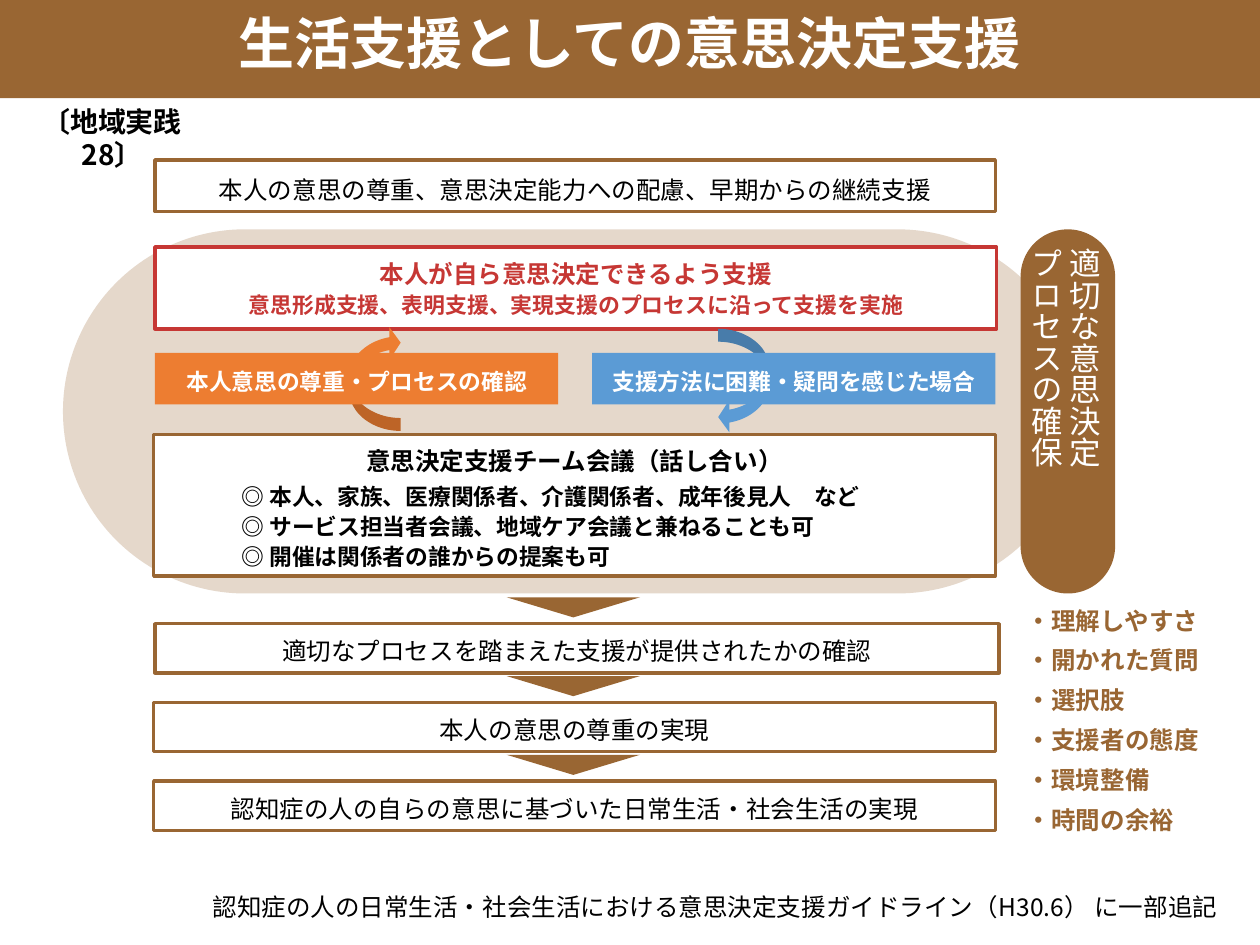
from dataclasses import dataclass

from lxml import etree
from pptx import Presentation
from pptx.dml.color import RGBColor
from pptx.enum.shapes import MSO_SHAPE
from pptx.enum.text import MSO_ANCHOR, MSO_AUTO_SIZE, PP_ALIGN
from pptx.oxml.ns import qn
from pptx.util import Inches, Pt

RECTANGLE = MSO_SHAPE.RECTANGLE
ROUNDED = MSO_SHAPE.ROUNDED_RECTANGLE
TRIANGLE = MSO_SHAPE.ISOSCELES_TRIANGLE
CURVED_ARROW = MSO_SHAPE.CURVED_LEFT_ARROW
CALLOUT = MSO_SHAPE.ROUNDED_RECTANGULAR_CALLOUT
LEFT, CENTER, RIGHT = PP_ALIGN.LEFT, PP_ALIGN.CENTER, PP_ALIGN.RIGHT
MIDDLE, TOP = MSO_ANCHOR.MIDDLE, MSO_ANCHOR.TOP


@dataclass(frozen=True)
class Theme:
    font: str = "Noto Sans CJK JP"
    brown: str = "996633"
    red: str = "C63734"
    orange: str = "ED7D31"
    blue: str = "5B9BD5"
    black: str = "000000"
    white: str = "FFFFFF"
    title: float = 32
    process: float = 18
    tag: float = 16
    body: float = 14
    label: float = 13
    detail: float = 12.5
    border: float = 2


theme = Theme()
deck = Presentation()
deck.slide_width, deck.slide_height = Inches(10), Inches(7.5)
column, row = deck.slide_width / 100, deck.slide_height / 75
page = deck.slides.add_slide(deck.slide_layouts[1])


def add_box(kind, left, top, width, height, fill=None, line=None, adjust=(), turn=0):
    box = page.shapes.add_shape(kind, int(left * column), int(top * row),
                                int(width * column), int(height * row))
    box.shadow.inherit = False
    if fill:
        box.fill.solid()
        box.fill.fore_color.rgb = RGBColor.from_string(fill)
    else:
        box.fill.background()
    if line:
        box.line.color.rgb = RGBColor.from_string(line)
        box.line.width = Pt(theme.border)
    else:
        box.line.fill.background()
    for index, value in enumerate(adjust):
        box.adjustments[index] = value
    box.rotation = turn
    return box


def write(box, text, size=theme.body, color=theme.black, bold=False, align=CENTER,
          leading=1.0, before=0, after=0, anchor=MIDDLE, wrap=True):
    frame = box.text_frame
    frame.word_wrap, frame.vertical_anchor = wrap, anchor
    para = frame.add_paragraph() if frame.text else frame.paragraphs[0]
    para.alignment = align
    para.line_spacing = Pt(leading) if leading > 3 else leading
    para.space_before, para.space_after = Pt(before), Pt(after)
    span = para.add_run()
    span.text = text
    span.font.name, span.font.size, span.font.bold = theme.font, Pt(size), bold
    span.font.color.rgb = RGBColor.from_string(color)


add_box(RECTANGLE, 0, 0, 100, 7.8, theme.brown)

principle = add_box(RECTANGLE, 12.3, 12.7, 66.7, 4.1, line=theme.brown)
write(principle, "本人の意思の尊重、意思決定能力への配慮、早期からの継続支援", leading=21)

cycle = add_box(ROUNDED, 5, 18.2, 80.7, 28.9, theme.brown, adjust=[0.5])
for tint in cycle.element.spPr.iter(qn("a:srgbClr")):
    etree.SubElement(tint, qn("a:alpha")).set("val", "25000")

support = add_box(RECTANGLE, 12.3, 19.6, 66.8, 6.5, theme.white, theme.red)
write(support, "本人が自ら意思決定できるよう支援", color=theme.red, bold=True,
      leading=17, before=6)
write(support, "意思形成支援、表明支援、実現支援のプロセスに沿って支援を実施",
      size=theme.detail, color=theme.red, bold=True, leading=17)

for left, top, color, turn in [(57, 26.1, theme.blue, 0), (27.7, 25.9, theme.orange, 180)]:
    add_box(CURVED_ARROW, left, top, 4.1, 8.3, color, adjust=[0.25, 0.63, 0.218], turn=turn)

for left, color, text in [(12.3, theme.orange, "本人意思の尊重・プロセスの確認"),
                          (47, theme.blue, "支援方法に困難・疑問を感じた場合")]:
    label = add_box(RECTANGLE, left, 28, 32, 4.1, color)
    write(label, text, size=theme.label, color=theme.white, bold=True, leading=19)

meeting = add_box(RECTANGLE, 12.2, 34.5, 66.8, 11.2, theme.white, theme.brown)
write(meeting, "意思決定支援チーム会議（話し合い）", bold=True, leading=20, after=3)
for text in ["本人、家族、医療関係者、介護関係者、成年後見人　など",
             "サービス担当者会議、地域ケア会議と兼ねることも可",
             "開催は関係者の誰からの提案も可"]:
    write(meeting, "◎ " + text, size=theme.label, bold=True, align=LEFT, leading=17)
for props in list(meeting.element.iter(qn("a:pPr")))[1:]:
    props.set("marL", str(int(6 * column)))
    props.set("indent", "0")

steps = [(12.3, 67, "適切なプロセスを踏まえた支援が提供されたかの確認"),
         (12.2, 66.8, "本人の意思の尊重の実現"),
         (12.2, 66.8, "認知症の人の自らの意思に基づいた日常生活・社会生活の実現")]
for index, (left, width, text) in enumerate(steps):
    top = 49.5 + 6.25 * index
    step = add_box(RECTANGLE, left, top, width, 3.9, theme.white, theme.brown)
    write(step, text, leading=20)
    add_box(TRIANGLE, 40.2, top - 2.1, 10.6, 1.6, theme.brown, turn=180)

title, points = page.shapes.title, page.placeholders[1]
for holder, (left, top, width, height) in [(title, (13.7, 0.9, 72.6, 5.7)),
                                           (points, (80.5, 46.2, 17, 21.9))]:
    holder.left, holder.top = int(left * column), int(top * row)
    holder.width, holder.height = int(width * column), int(height * row)
    holder.element.getparent().append(holder.element)
write(title, "生活支援としての意思決定支援", size=theme.title, color=theme.white,
      bold=True, leading=32)
for text in ["理解しやすさ", "開かれた質問", "選択肢", "支援者の態度", "環境整備", "時間の余裕"]:
    write(points, "・" + text, color=theme.brown, bold=True, align=LEFT, before=6)
for props in points.element.iter(qn("a:pPr")):
    props.set("marL", "0")
    props.set("indent", "0")
    etree.SubElement(props, qn("a:buNone"))

add_box(ROUNDED, 81, 18.2, 7.5, 28.9, theme.brown, adjust=[0.5])
process = add_box(CALLOUT, 79.6, 18.2, 9.9, 28.9, adjust=[-0.453, -0.333, 0.167])
for text in ["適切な意思決定", "プロセスの確保"]:
    write(process, text, size=theme.process, color=theme.white, wrap=False)
for body in process.element.iter(qn("a:bodyPr")):
    body.set("vert", "eaVert")

credit = page.shapes.add_textbox(int(12.3 * column), int(69.6 * row),
                                 int(85.3 * column), int(4.1 * row))
write(credit, "認知症の人の日常生活・社会生活における意思決定支援ガイドライン（H30.6） に一部追記",
      align=RIGHT, leading=21)

tag = page.shapes.add_textbox(0, int(7.8 * row), int(17.8 * column), int(3.7 * row))
write(tag, "〔地域実践28〕", size=theme.tag, bold=True, anchor=TOP)
tag.text_frame.auto_size = MSO_AUTO_SIZE.SHAPE_TO_FIT_TEXT

for props in page.element.iter(qn("a:rPr")):
    etree.SubElement(props, qn("a:ea")).set("typeface", theme.font)

deck.save("out.pptx")
